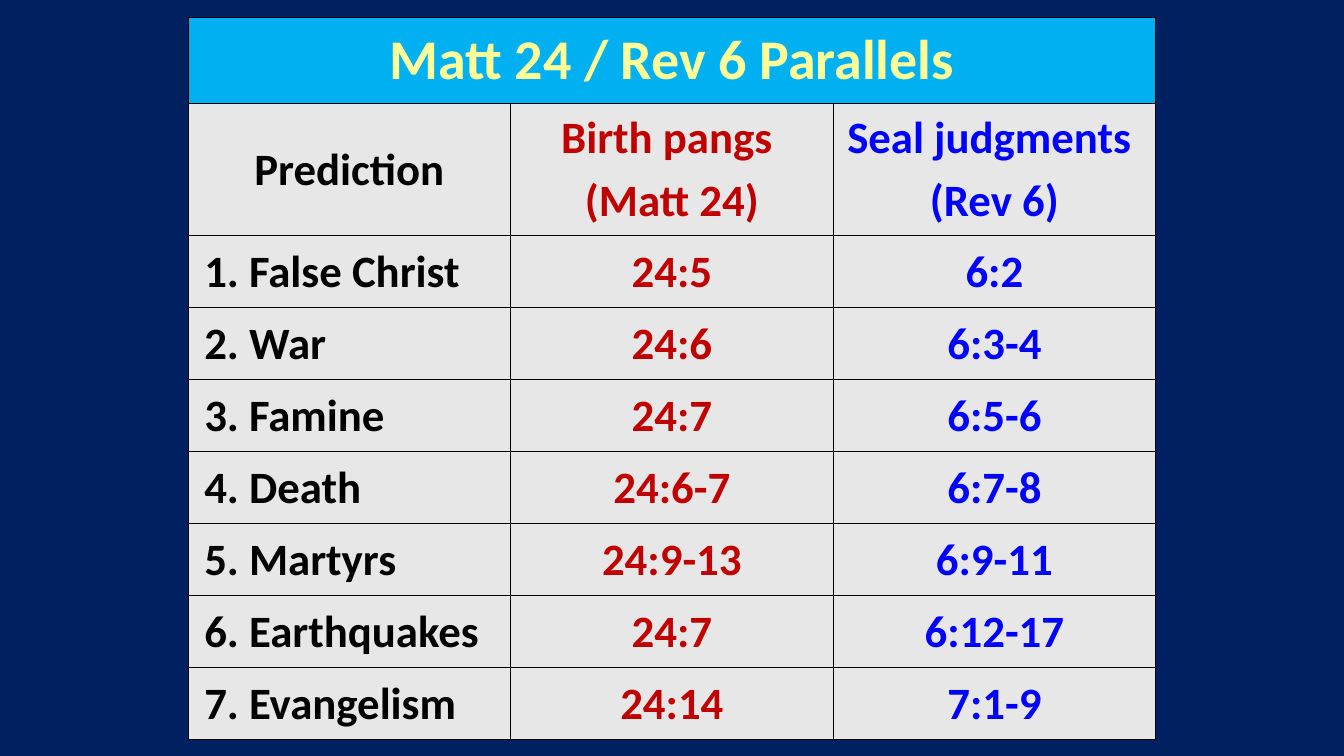
"""Build a slide with a table of parallels between Matthew 24 and Revelation 6."""
from dataclasses import dataclass

from lxml import etree
from pptx import Presentation
from pptx.dml.color import RGBColor
from pptx.enum.text import MSO_ANCHOR, PP_ALIGN
from pptx.oxml.ns import qn
from pptx.table import Table, _Cell
from pptx.util import Inches, Pt

MIDDLE = MSO_ANCHOR.MIDDLE
LEFT, CENTER = PP_ALIGN.LEFT, PP_ALIGN.CENTER
WIDE, HIGH = 13.33, 7.5
COL = 0.24 * WIDE
TOP, TALL = 0.17, 7.17
TITLE_ROW, HEAD_ROW = 0.86, 1.31


@dataclass(frozen=True)
class Theme:
    """Hold colours, font and type sizes."""
    back: str = "002060"
    band: str = "00B0F0"
    cell: str = "E7E7E7"
    title: str = "FFFF99"
    ink: str = "000000"
    red: str = "C00000"
    blue: str = "0000FF"
    font: str = "Calibri"
    big: int = 40
    body: int = 32
    line: float = 1
    gap: int = 20


@dataclass(frozen=True)
class Entry:
    """Hold one row of the table."""
    label: str
    matt: str
    rev: str


THEME = Theme()
TITLE = "Matt 24 / Rev 6 Parallels"
HEAD = Entry("Prediction", "Birth pangs \n(Matt 24)", "Seal judgments \n(Rev 6)")
SIGNS = [
    Entry("False Christ", "24:5", "6:2"),
    Entry("War", "24:6", "6:3-4"),
    Entry("Famine", "24:7", "6:5-6"),
    Entry("Death", "24:6-7", "6:7-8"),
    Entry("Martyrs", "24:9-13", "6:9-11"),
    Entry("Earthquakes", "24:7", "6:12-17"),
    Entry("Evangelism", "24:14", "7:1-9"),
]


def write(cell: _Cell, text: str, *, color: str, size: int = THEME.body,
          align: PP_ALIGN = CENTER, indent: float = 0) -> None:
    """Write bold lines into a cell."""
    cell.vertical_anchor = MIDDLE
    frame = cell.text_frame
    frame.text = text
    for para in frame.paragraphs:
        para.alignment = align
        props = para._p.get_or_add_pPr()
        props.set("marL", str(Inches(indent)))
        props.set("indent", "0")
        space = etree.SubElement(props, qn("a:spcBef"))
        etree.SubElement(space, qn("a:spcPct"), val=str(THEME.gap * 1000))
        for run in para.runs:
            font = run.font
            font.name, font.size, font.bold = THEME.font, Pt(size), True
            font.color.rgb = RGBColor.from_string(color)


def dress(cell: _Cell, fill: str) -> None:
    """Give a cell its borders and fill."""
    props = cell._tc.get_or_add_tcPr()
    for side in ("a:lnL", "a:lnR", "a:lnT", "a:lnB"):
        edge = etree.SubElement(props, qn(side), w=str(Pt(THEME.line)))
        paint = etree.SubElement(edge, qn("a:solidFill"))
        etree.SubElement(paint, qn("a:srgbClr"), val=THEME.ink)
    cell.fill.solid()
    cell.fill.fore_color.rgb = RGBColor.from_string(fill)


def fill_row(table: Table, row: int, entry: Entry, *,
             align: PP_ALIGN = CENTER, indent: float = 0) -> None:
    """Write one entry across a row."""
    write(table.cell(row, 0), entry.label, color=THEME.ink, align=align, indent=indent)
    write(table.cell(row, 1), entry.matt, color=THEME.red)
    write(table.cell(row, 2), entry.rev, color=THEME.blue)


def main() -> None:
    """Build and save the slide."""
    deck = Presentation()
    deck.slide_width, deck.slide_height = Inches(WIDE), Inches(HIGH)
    slide = deck.slides.add_slide(deck.slide_layouts[6])
    back = slide.background.fill
    back.solid()
    back.fore_color.rgb = RGBColor.from_string(THEME.back)

    sign_row = (TALL - TITLE_ROW - HEAD_ROW) / len(SIGNS)
    rows = [TITLE_ROW, HEAD_ROW] + [sign_row] * len(SIGNS)
    left = (WIDE - 3 * COL) / 2
    table = slide.shapes.add_table(len(rows), 3, Inches(left), Inches(TOP),
                                   Inches(3 * COL), Inches(TALL)).table
    table.first_row = table.horz_banding = False
    for col in table.columns:
        col.width = Inches(COL)
    for index, (row, high) in enumerate(zip(table.rows, rows)):
        row.height = Inches(high)
        for cell in row.cells:
            dress(cell, THEME.cell if index else THEME.band)

    table.cell(0, 0).merge(table.cell(0, 2))
    write(table.cell(0, 0), TITLE, color=THEME.title, size=THEME.big)
    fill_row(table, 1, HEAD)
    for num, sign in enumerate(SIGNS, 1):
        entry = Entry(f"{num}. {sign.label}", sign.matt, sign.rev)
        fill_row(table, num + 1, entry, align=LEFT, indent=0.06)
    deck.save("out.pptx")


if __name__ == "__main__":
    main()
